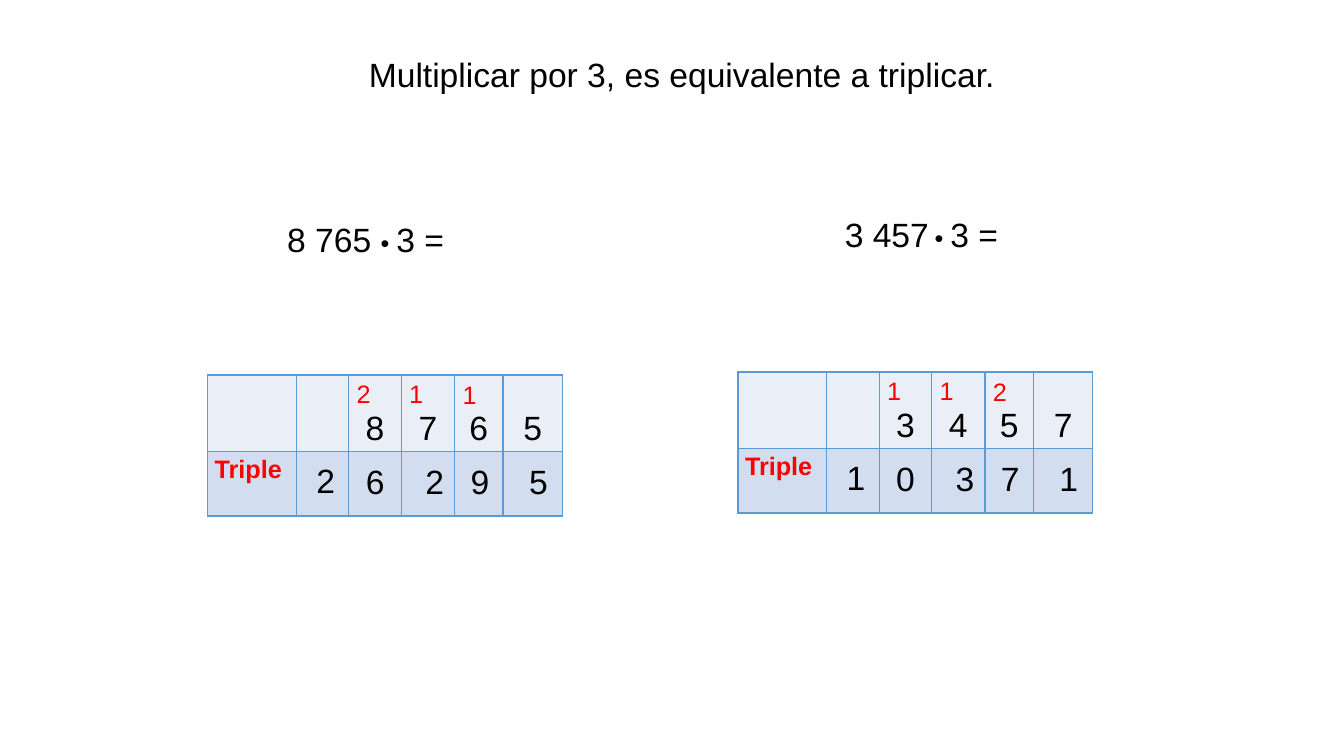
from lxml import etree
from pptx import Presentation
from pptx import util as u
from pptx.dml.color import RGBColor
from pptx.enum import text
from pptx.oxml import ns

BLACK = RGBColor(0x00, 0x00, 0x00)
RED = RGBColor(0xFF, 0x00, 0x00)
GRID_BLUE = RGBColor(0x5B, 0x9B, 0xD5)
ROW_FILLS = (RGBColor(0xEA, 0xEF, 0xF7), RGBColor(0xD2, 0xDE, 0xEF))

COLUMN_WIDTHS = (0.88, 0.52, 0.52, 0.53, 0.48, 0.59)
ROW_HEIGHTS = (0.76, 0.64)
RESULT_OFFSETS = ((0.98, 0.79), (1.47, 0.8), (2.06, 0.8), (2.51, 0.8), (3.09, 0.8))
CARRY_OFFSETS = ((1.38, -0.06), (1.9, -0.06), (2.43, -0.05))


class Lesson:
    font = "Arial"
    large = 24
    small = 18

    def __init__(self, slide):
        self.slide = slide

    def add_run(self, paragraph, words, size, color=BLACK, bold=False, font=None):
        run = paragraph.add_run()
        run.text = words
        run.font.name = font or self.font
        run.font.size = u.Pt(size)
        run.font.bold = bold
        run.font.color.rgb = color

    def add_text(self, left, top, width, height, runs, color=BLACK, wrap=True):
        box = self.slide.shapes.add_textbox(
            u.Inches(left), u.Inches(top), u.Inches(width), u.Inches(height))
        box.text_frame.word_wrap = wrap
        box.text_frame.auto_size = text.MSO_AUTO_SIZE.SHAPE_TO_FIT_TEXT
        paragraph = box.text_frame.paragraphs[0]
        for words, size, font in runs:
            self.add_run(paragraph, words, size, color, font=font)
        return paragraph

    def add_carry(self, left, top, digit):
        paragraph = self.add_text(
            left, top, 0.3, 0.42, [(digit, self.small, self.font)], RED)
        paragraph.alignment = text.PP_ALIGN.CENTER
        paragraph.line_spacing = 1.15
        paragraph.space_after = u.Pt(10)

    def style_cell(self, cell, fill):
        cell.margin_left = cell.margin_right = u.Inches(0.07)
        cell.margin_top = cell.margin_bottom = 0
        cell.fill.solid()
        cell.fill.fore_color.rgb = fill
        properties = cell._tc.get_or_add_tcPr()
        for position, side in enumerate(("lnL", "lnR", "lnT", "lnB")):
            border = etree.Element(ns.qn(f"a:{side}"), w=str(u.Pt(1)))
            solid = etree.SubElement(border, ns.qn("a:solidFill"))
            etree.SubElement(solid, ns.qn("a:srgbClr"), val=str(GRID_BLUE))
            properties.insert(position, border)

    def add_grid(self, left, top, factor):
        grid = self.slide.shapes.add_table(
            len(ROW_HEIGHTS), len(COLUMN_WIDTHS), u.Inches(left), u.Inches(top),
            u.Inches(sum(COLUMN_WIDTHS)), u.Inches(sum(ROW_HEIGHTS))).table
        grid.first_row = grid.horz_banding = False
        for column, width in zip(grid.columns, COLUMN_WIDTHS):
            column.width = u.Inches(width)
        for row, height, fill in zip(grid.rows, ROW_HEIGHTS, ROW_FILLS):
            row.height = u.Inches(height)
            for cell in row.cells:
                self.style_cell(cell, fill)
        for column, digit in enumerate(factor, start=2):
            cell = grid.cell(0, column)
            cell.margin_top = u.Inches(0.35)
            paragraph = cell.text_frame.paragraphs[0]
            paragraph.alignment = text.PP_ALIGN.CENTER
            self.add_run(paragraph, digit, self.large)
        label = grid.cell(1, 0).text_frame.paragraphs[0]
        label.line_spacing = 1.15
        self.add_run(label, "Triple", self.small, RED, bold=True)

    def add_multiplication(self, left, top, factor, carries, product):
        self.add_grid(left, top, factor)
        for (dx, dy), digit in zip(RESULT_OFFSETS, product):
            self.add_text(left + dx, top + dy, 0.34, 0.5,
                          [(digit, self.large, self.font)])
        for (dx, dy), digit in zip(CARRY_OFFSETS, carries):
            self.add_carry(left + dx, top + dy, digit)

    def add_expression(self, left, top, width, factor_runs):
        dot_and_three = [("• ", self.small, self.font), ("3 =", self.large, self.font)]
        self.add_text(left, top, width, 0.5, factor_runs + dot_and_three)


def main():
    deck = Presentation()
    deck.slide_width = u.Inches(13.33)
    deck.slide_height = u.Inches(7.5)
    lesson = Lesson(deck.slides.add_slide(deck.slide_layouts[6]))
    heading = "Multiplicar por 3, es equivalente a triplicar."
    lesson.add_text(3.56, 0.49, 6.57, 0.5,
                    [(heading, lesson.large, lesson.font)], wrap=False)
    lesson.add_multiplication(2.06, 3.72, "8765", "211", "26295")
    lesson.add_multiplication(7.32, 3.69, "3457", "112", "10371")
    lesson.add_expression(2.75, 2.12, 1.87, [("8 765 ", lesson.large, lesson.font)])
    lesson.add_expression(8.28, 2.07, 2.11, [("3 457", lesson.large, lesson.font),
                                             (" ", lesson.small, "Calibri")])
    deck.save("out.pptx")


if __name__ == "__main__":
    main()
